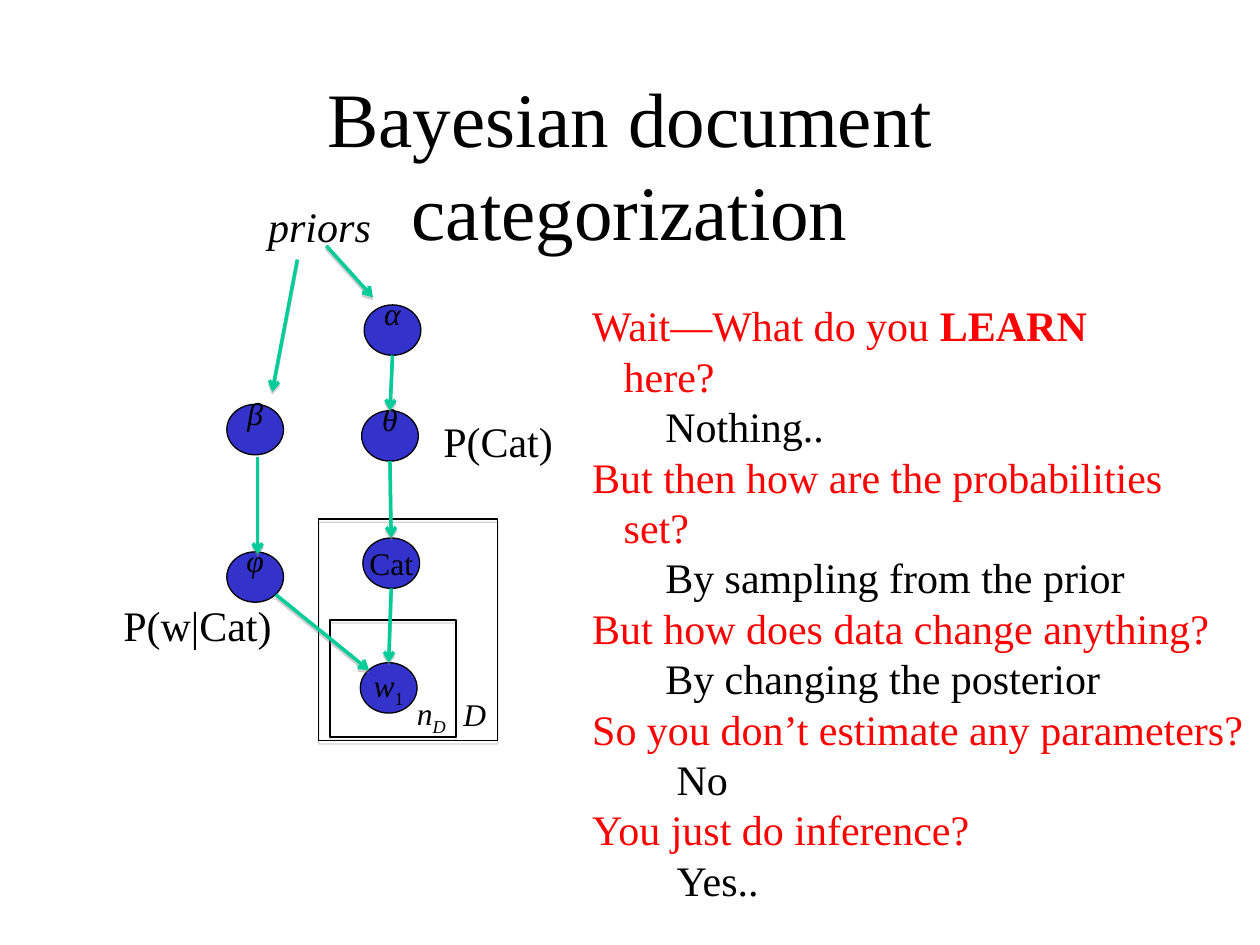
from lxml import etree
from pptx import Presentation
from pptx.dml.color import RGBColor
from pptx.enum.shapes import MSO_CONNECTOR, MSO_SHAPE
from pptx.enum.text import MSO_ANCHOR, MSO_AUTO_SIZE, PP_ALIGN
from pptx.oxml.ns import qn
from pptx.util import Inches, Pt

FONT = "Times New Roman"
COLORS = {"text": "000000", "question": "FF0000", "node": "3333CC",
          "arrow": "00CC99", "shadow": "808080"}
NODE_WIDTH, NODE_HEIGHT = 0.45, 0.4

# Nodes: left and top within the graph box, then runs as (text, italic, subscript)
NODES = {
    "Cat": (2.08, 2.77, [("Cat", False, False)]),
    "w": (2.06, 3.76, [("w", True, False), ("1", False, True)]),
    "θ": (2.07, 1.76, [("θ", True, False)]),
    "α": (2.09, 0.92, [("α", True, False)]),
    "φ": (1.0, 2.88, [("φ", True, False)]),
    "β": (1.0, 1.71, [("β", True, False)]),
}
RAISED_NODES = "θαφβ"
VERTICAL_EDGES = [("α", "θ", 0), ("θ", "Cat", 0), ("Cat", "w", 0), ("β", "φ", 0.02)]
SLANTED_EDGES = [(1.39, 3.22, 2.13, 3.82), (1.56, 0.56, 1.36, 1.61),
                 (1.79, 0.45, 2.16, 0.86)]
PLATES = [(1.82, 3.42, 1, 0.93), (1.73, 2.62, 1.42, 1.76)]
LABELS = [
    (2.41, 3.96, 0.52, 0.4, 18, [("n", True, False), ("D", True, True)]),
    (2.78, 3.97, 0.47, 0.4, 18, [("D", True, False)]),
    (1.23, 0.04, 1.17, 0.51, 24, [("priors", True, False)]),
    (0.08, 3.21, 1.39, 0.51, 24, [("P(w|Cat)", False, False)]),
    (2.62, 1.75, 1.08, 0.5, 24, [("P(Cat)", False, False)]),
]

# Dialogue: indent in inches, colour, runs as (text, bold)
DIALOGUE = [
    (0, "question", [("Wait—What do you ", False), ("LEARN", True)]),
    (0.25, "question", [("here?", False)]),
    (0.58, "text", [("Nothing..", False)]),
    (0, "question", [("But then how are the probabilities", False)]),
    (0.25, "question", [("set?", False)]),
    (0.58, "text", [("By sampling from the prior", False)]),
    (0, "question", [("But how does data change anything?", False)]),
    (0.58, "text", [("By changing the posterior", False)]),
    (0, "question", [("So you don’t estimate any parameters?", False)]),
    (0.67, "text", [("No", False)]),
    (0, "question", [("You just do inference?", False)]),
    (0.67, "text", [("Yes..", False)]),
]


def color(name):
    return RGBColor.from_string(COLORS[name])


def place(shape, left, top, width, height):
    shape.left, shape.top = Inches(left), Inches(top)
    shape.width, shape.height = Inches(width), Inches(height)


def add_run(paragraph, text, size, color_name="text", bold=False, italic=False,
            subscript=False):
    run = paragraph.add_run()
    run.text = text
    font = run.font
    font.name, font.size, font.bold, font.italic = FONT, Pt(size), bold, italic
    font.color.rgb = color(color_name)
    if subscript:
        run._r.get_or_add_rPr().set("baseline", "-25000")


def add_symbol(paragraph, runs, size):
    for text, italic, subscript in runs:
        add_run(paragraph, text, size, italic=italic, subscript=subscript)


def add_shadow(shape, opacity, distance):
    effects = etree.SubElement(shape._element.spPr, qn("a:effectLst"))
    shadow = etree.SubElement(effects, qn("a:outerShdw"), blurRad="0",
                              dist=str(Pt(distance)), dir="5400000", rotWithShape="0")
    shade = etree.SubElement(shadow, qn("a:srgbClr"), val=COLORS["shadow"])
    etree.SubElement(shade, qn("a:alpha"), val=str(opacity * 1000))


def add_outlined(slide, kind, left, top, width, height):
    shape = slide.shapes.add_shape(kind, Inches(left), Inches(top),
                                   Inches(width), Inches(height))
    shape.line.color.rgb = color("text")
    shape.line.width = Pt(0.75)
    return shape


def add_node(slide, left, top, runs, raised):
    node = add_outlined(slide, MSO_SHAPE.OVAL, left, top, NODE_WIDTH, NODE_HEIGHT)
    node.shadow.inherit = False
    node.fill.solid()
    node.fill.fore_color.rgb = color("node")
    frame = node.text_frame
    frame.word_wrap = False
    frame.vertical_anchor = MSO_ANCHOR.MIDDLE
    if raised:
        frame.margin_top, frame.margin_bottom = 0, Inches(0.27)
    frame.paragraphs[0].alignment = PP_ALIGN.CENTER
    add_symbol(frame.paragraphs[0], runs, 18)


def add_plate(slide, left, top, width, height):
    plate = add_outlined(slide, MSO_SHAPE.RECTANGLE, left, top, width, height)
    plate.fill.background()
    add_shadow(plate, 35, 1.8)


def add_arrow(slide, x1, y1, x2, y2):
    arrow = slide.shapes.add_connector(MSO_CONNECTOR.STRAIGHT, Inches(x1), Inches(y1),
                                       Inches(x2), Inches(y2))
    arrow.line.color.rgb = color("arrow")
    arrow.line.width = Pt(2)
    etree.SubElement(arrow.line._get_or_add_ln(), qn("a:tailEnd"), type="arrow")
    add_shadow(arrow, 38, 1.6)


def add_label(slide, left, top, width, height, size, runs):
    label = slide.shapes.add_textbox(Inches(left), Inches(top),
                                     Inches(width), Inches(height))
    label.text_frame.word_wrap = False
    add_symbol(label.text_frame.paragraphs[0], runs, size)


def fill_title(slide, left, top, width, height):
    title = slide.shapes.title
    place(title, left, top, width, height)
    frame = title.text_frame
    frame.word_wrap = True
    frame.auto_size = MSO_AUTO_SIZE.NONE
    frame.vertical_anchor = MSO_ANCHOR.MIDDLE
    frame.paragraphs[0].alignment = PP_ALIGN.CENTER
    add_run(frame.paragraphs[0], "Bayesian document categorization", 44)


def draw_graph(slide, left, top):
    for name, (x, y, runs) in NODES.items():
        add_node(slide, left + x, top + y, runs, name in RAISED_NODES)
    for x, y, width, height in PLATES:
        add_plate(slide, left + x, top + y, width, height)
    # Arrows from the bottom of one node to the top of the next
    for start, end, shift in VERTICAL_EDGES:
        (x1, y1, _), (x2, y2, _) = NODES[start], NODES[end]
        middle = left + NODE_WIDTH / 2 + shift
        add_arrow(slide, x1 + middle, top + y1 + NODE_HEIGHT + shift,
                  x2 + middle, top + y2 + shift)
    for x1, y1, x2, y2 in SLANTED_EDGES:
        add_arrow(slide, left + x1, top + y1, left + x2, top + y2)
    for x, y, *label in LABELS:
        add_label(slide, left + x, top + y, *label)


def fill_dialogue(slide, left, top, width, height):
    body = slide.placeholders[1]
    place(body, left, top, width, height)
    frame = body.text_frame
    frame.word_wrap = True
    frame.auto_size = MSO_AUTO_SIZE.NONE
    frame.vertical_anchor = MSO_ANCHOR.TOP
    for index, (indent, color_name, runs) in enumerate(DIALOGUE):
        paragraph = frame.add_paragraph() if index else frame.paragraphs[0]
        paragraph.alignment = PP_ALIGN.LEFT
        paragraph.space_before = Pt(0)
        properties = paragraph._p.get_or_add_pPr()
        properties.set("marL", str(Inches(indent)))
        properties.set("indent", "0")
        etree.SubElement(properties, qn("a:buNone"))
        for text, bold in runs:
            add_run(paragraph, text, 24, color_name, bold=bold)


def main():
    presentation = Presentation()
    presentation.slide_width, presentation.slide_height = Inches(10), Inches(7.5)
    slide = presentation.slides.add_slide(presentation.slide_layouts[1])
    fill_title(slide, 0.75, 0.67, 8.5, 1.25)
    draw_graph(slide, 0.8, 1.5)
    fill_dialogue(slide, 4.6, 2.33, 5.41, 4.95)
    presentation.save("out.pptx")


if __name__ == "__main__":
    main()
